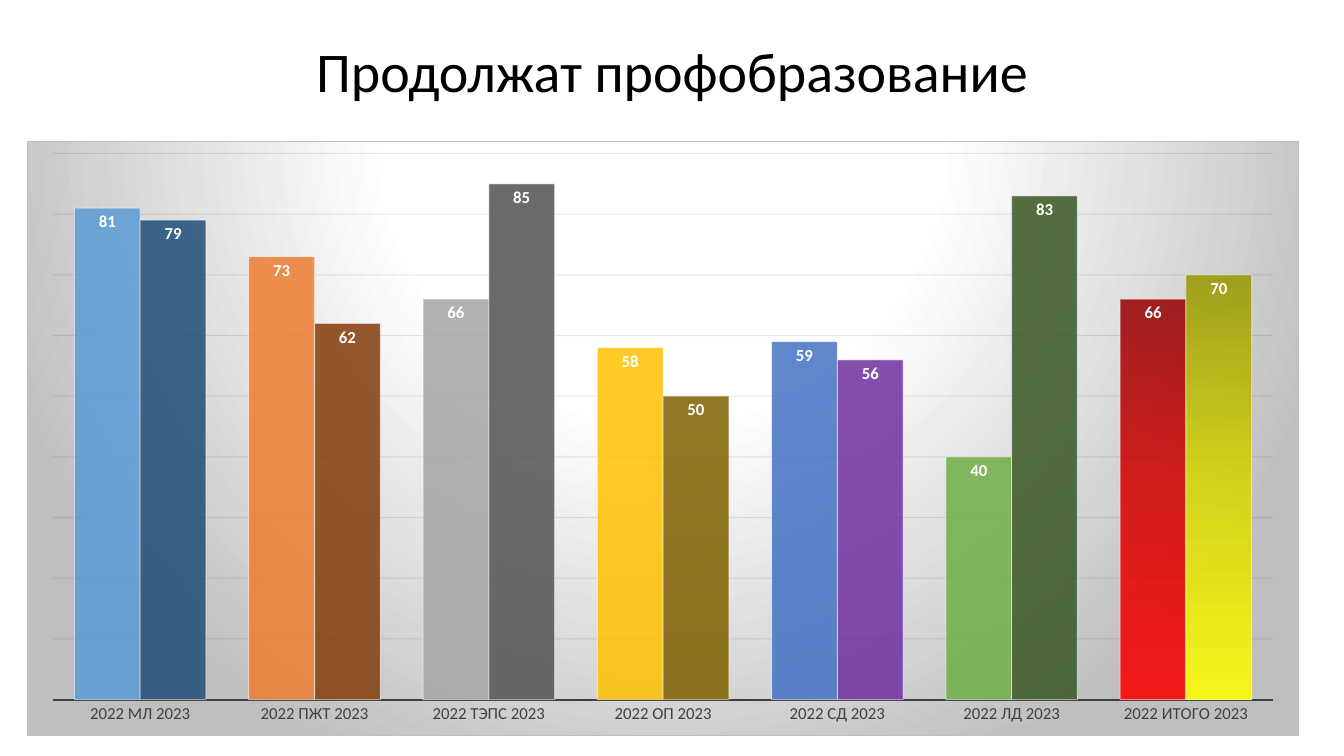
from lxml import etree
from pptx import Presentation
from pptx.chart.data import CategoryChartData
from pptx.dml.color import RGBColor
from pptx.enum.chart import XL_CHART_TYPE, XL_LABEL_POSITION, XL_TICK_MARK
from pptx.enum.text import MSO_ANCHOR, PP_ALIGN
from pptx.oxml import parse_xml
from pptx.oxml.ns import nsdecls, qn
from pptx.util import Pt

COLUMN = XL_CHART_TYPE.COLUMN_CLUSTERED
INSIDE = XL_LABEL_POSITION.INSIDE_END
NO_TICK = XL_TICK_MARK.NONE
BOTTOM = MSO_ANCHOR.BOTTOM
CENTER = PP_ALIGN.CENTER

COLORS = {
    "black": "000000", "white": "FFFFFF", "axis": "404040",
    "grid": "0D0D0D", "edge": "BFBFBF",
    "blue": "5B9BD5", "orange": "ED7D31", "gray": "A5A5A5",
    "gold": "FFC000", "royal": "4472C4", "green": "70AD47",
    "navy": "1F4E79", "brown": "843C0B", "slate": "525252",
    "olive": "806000", "purple": "7030A0", "forest": "385723",
    "red1": "970000", "red2": "D70000", "red3": "FF0000",
    "yellow1": "979700", "yellow2": "D7D700", "yellow3": "FFFF00",
}
GROUPS = ["МЛ", "ПЖТ", "ТЭПС", "ОП", "СД", "ЛД", "ИТОГО"]
SERIES = [
    ("Series 1", [81, 73, 66, 58, 59, 40, 66], "blue",
     ["blue", "orange", "gray", "gold", "royal", "green"],
     ["red1", "red2", "red3"]),
    ("Series 2", [79, 62, 85, 50, 56, 83, 70], "orange",
     ["navy", "brown", "slate", "olive", "purple", "forest"],
     ["yellow1", "yellow2", "yellow3"]),
]
LINEAR = '<a:lin ang="5400000" scaled="0"/>'
RADIAL = ('<a:path path="circle"><a:fillToRect l="50000" t="-80000" '
          'r="50000" b="180000"/></a:path>')


def rgb(name):
    return RGBColor.from_string(COLORS[name])


def fade(color, alpha):
    etree.SubElement(color, qn("a:alpha")).set("val", str(alpha * 1000))


def blend(names, stops, shade, alpha=100):
    marks = "".join(
        f'<a:gs pos="{stop * 1000}"><a:srgbClr val="{COLORS[name]}">'
        f'<a:alpha val="{alpha * 1000}"/></a:srgbClr></a:gs>'
        for name, stop in zip(names, stops))
    return parse_xml(f'<a:gradFill rotWithShape="1" {nsdecls("a")}>'
                     f'<a:gsLst>{marks}</a:gsLst>{shade}</a:gradFill>')


class Deck:
    def __init__(self, font):
        self.font = font
        self.show = Presentation()
        self.show.slide_width = Pt(960)
        self.show.slide_height = Pt(540)
        self.slide = self.show.slides.add_slide(self.show.slide_layouts[0])
        body = self.slide.placeholders[1].element
        body.getparent().remove(body)

    def style(self, font, size, color, bold=False):
        font.name = self.font
        font.size = Pt(size)
        font.bold = bold
        font.color.rgb = rgb(color)

    def title(self, text, left, top, width, height):
        shape = self.slide.shapes.title
        shape.left, shape.top = Pt(left), Pt(top)
        shape.width, shape.height = Pt(width), Pt(height)
        frame = shape.text_frame
        frame.text = text
        frame.vertical_anchor = BOTTOM
        line = frame.paragraphs[0]
        line.alignment = CENTER
        line.line_spacing = 0.9
        self.style(line.runs[0].font, 40, "black")

    def stroke(self, form, color, width, alpha):
        form.line.color.rgb = rgb(color)
        form.line.width = Pt(width)
        props = form._element.get_or_add_spPr()
        fade(props.find(f"{qn('a:ln')}//{qn('a:srgbClr')}"), alpha)

    def paint(self, form, names):
        props = form._element.get_or_add_spPr()
        if len(names) == 1:
            form.fill.solid()
            form.fill.fore_color.rgb = rgb(names[0])
            fade(props.find(f"{qn('a:solidFill')}/{qn('a:srgbClr')}"), 85)
        else:
            props.insert(0, blend(names, [0, 50, 100], LINEAR, 85))
        self.stroke(form, "white", 0.75, 50)

    def panel(self, chart):
        props = parse_xml(
            f'<c:spPr {nsdecls("c", "a")}><a:ln w="9525"><a:solidFill>'
            f'<a:srgbClr val="{COLORS["edge"]}"/></a:solidFill></a:ln></c:spPr>')
        props.insert(0, blend(["white", "white", "edge"], [0, 39, 100], RADIAL))
        chart._chartSpace.find(qn("c:chart")).addnext(props)

    def place(self, chart, left, top, width, height):
        sizes = zip("xywh", (left, top, width, height))
        marks = "".join(f'<c:{key} val="{size}"/>' for key, size in sizes)
        area = chart._chartSpace.find(f".//{qn('c:plotArea')}")
        for old in area.findall(qn("c:layout")):
            area.remove(old)
        area.insert(0, parse_xml(
            f'<c:layout {nsdecls("c")}><c:manualLayout>'
            '<c:layoutTarget val="inner"/><c:xMode val="edge"/>'
            f'<c:yMode val="edge"/>{marks}</c:manualLayout></c:layout>'))

    def axes(self, chart):
        base = chart.category_axis
        base.major_tick_mark = base.minor_tick_mark = NO_TICK
        base.format.line.color.rgb = rgb("axis")
        base.format.line.width = Pt(1.5)
        self.style(base.tick_labels.font, 12, "axis")
        scale = chart.value_axis
        scale.minimum_scale, scale.maximum_scale = 0, 90
        scale.major_unit = 10
        scale.visible = False
        self.stroke(scale.major_gridlines.format, "grid", 0.75, 10)

    def columns(self, left, top, width, height):
        data = CategoryChartData()
        data.categories = [f"2022 {group} 2023" for group in GROUPS]
        for name, values, *_ in SERIES:
            data.add_series(name, values)
        chart = self.slide.shapes.add_chart(
            COLUMN, Pt(left), Pt(top), Pt(width), Pt(height), data).chart
        chart.has_title = chart.has_legend = False
        self.style(chart.font, 10, "black")
        self.panel(chart)
        self.place(chart, 0.02, 0.02, 0.96, 0.92)
        self.axes(chart)
        plot = chart.plots[0]
        plot.gap_width, plot.overlap = 65, 0
        plot.vary_by_categories = False
        for series, (_, _, main, tints, total) in zip(plot.series, SERIES):
            self.paint(series.format, [main])
            for spot, names in enumerate([[tint] for tint in tints] + [total]):
                self.paint(series.points[spot].format, names)
            labels = series.data_labels
            labels.show_value = True
            labels.position = INSIDE
            self.style(labels.font, 12, "white", True)


def main():
    deck = Deck("Calibri")
    deck.title("Продолжат профобразование", 120, 22.3, 720, 56.2)
    deck.columns(19.4, 100.8, 908.6, 424.8)
    deck.show.save("out.pptx")


if __name__ == "__main__":
    main()
